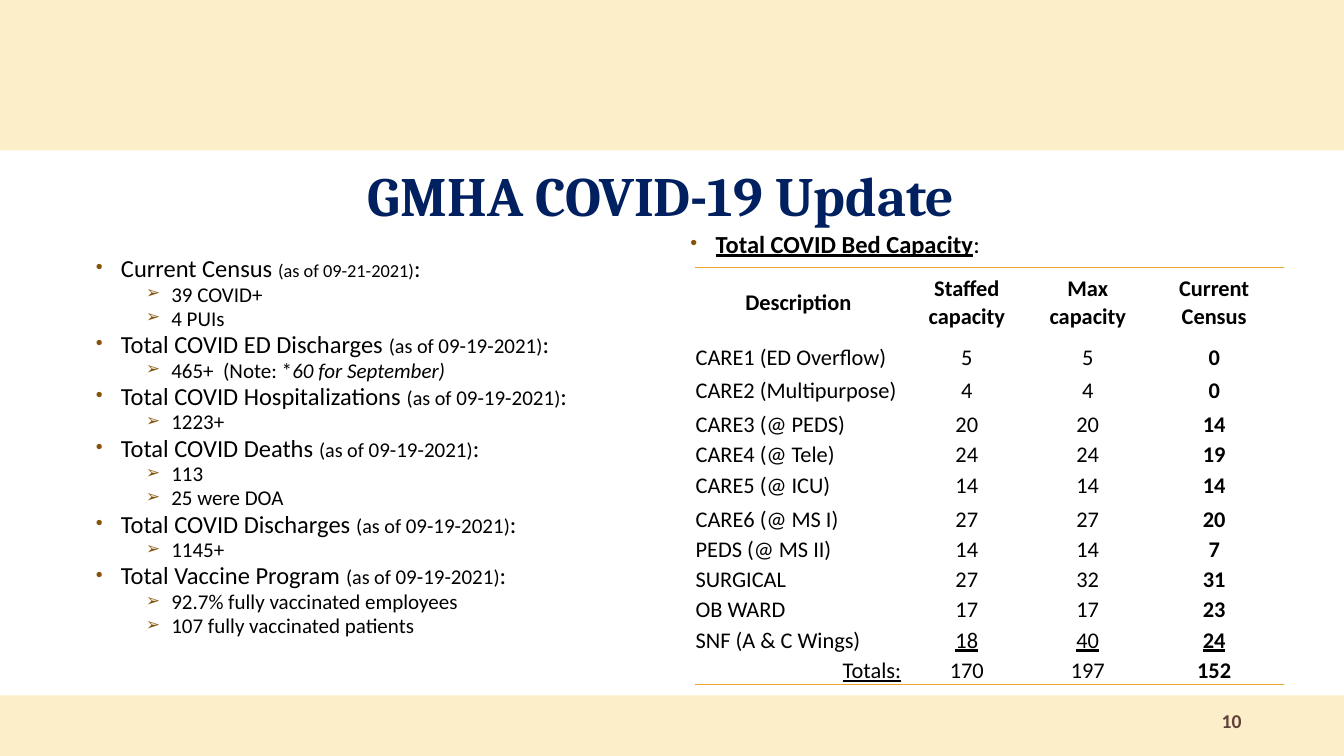
"""Build the GMHA COVID-19 update slide on a grid of 160 columns by 90 rows."""
from dataclasses import dataclass
from typing import Any

from lxml import etree
from pptx import Presentation
from pptx.dml.color import RGBColor
from pptx.enum.shapes import MSO_SHAPE
from pptx.enum.text import MSO_ANCHOR, MSO_AUTO_SIZE, PP_ALIGN
from pptx.oxml.ns import qn
from pptx.util import Emu, Pt

COLS, ROWS, UNIT = 160, 90, 76200
RECT = MSO_SHAPE.RECTANGLE
TOP, MIDDLE, BOTTOM = MSO_ANCHOR.TOP, MSO_ANCHOR.MIDDLE, MSO_ANCHOR.BOTTOM
LEFT, CENTER, RIGHT = PP_ALIGN.LEFT, PP_ALIGN.CENTER, PP_ALIGN.RIGHT
FIXED = MSO_AUTO_SIZE.NONE
PLAIN = "{2D5ABB26-0587-4C30-8999-92F81FD0307C}"
HEX = {"band": "FBEEC9", "title": "002060", "text": "000000",
       "bullet": "85540A", "rule": "F0A22E", "page": "624139"}


@dataclass(frozen=True)
class Area:
    col: float
    row: float
    wide: float
    high: float


@dataclass(frozen=True)
class Piece:
    text: str
    size: float = 15
    bold: bool = False
    slant: bool = False
    under: bool = False
    color: str = "text"
    font: str = "Calibri"


@dataclass(frozen=True)
class Topic:
    head: str
    points: tuple[tuple[Piece, ...], ...]
    date: str = "09-19-2021"
    small: float = 14.4
    mid: float = 15

    def pieces(self) -> tuple[Piece, ...]:
        return (Piece(self.head + " ", 17.5), Piece("(as of ", self.small),
                Piece(self.date, self.mid), Piece(")", self.small), Piece(":", 17.5))


@dataclass(frozen=True)
class Ward:
    name: str
    staffed: str
    most: str
    census: str
    high: float


BANDS = (Area(0, 82.8, COLS, 7.2), Area(0, 0, COLS, 17.9))
TITLE = Area(42.6, 18.7, 80.2, 8.9)
STATS = Area(10.2, 30.5, 68, 49.9)
BEDS = Area(81, 27.6, 68, 49.3)
GRID = Area(82.7, 31.8, 70.2, 49.7)
PAGE = Area(106, 83.4, 43, 4.8)
WIDTHS = (24.7, 15.4, 13.4, 16.7)

TOPICS = (
    Topic("Current Census", ((Piece("39 COVID+"),), (Piece("4 PUIs"),)),
          "09-21-2021", 13.1, 13.1),
    Topic("Total COVID ED Discharges",
          ((Piece("465+  (Note: *"), Piece("60 for September)", slant=True)),)),
    Topic("Total COVID Hospitalizations", ((Piece("1223+"),),)),
    Topic("Total COVID Deaths", ((Piece("113"),), (Piece("25 were DOA"),))),
    Topic("Total COVID Discharges", ((Piece("1145+"),),)),
    Topic("Total Vaccine Program", ((Piece("92.7% fully vaccinated employees"),),
                                    (Piece("107 fully vaccinated patients"),))),
)
WARDS = (
    Ward("Description", "Staffed capacity", "Max capacity", "Current Census", 8.4),
    Ward("CARE1 (ED Overflow)", "5", "5", "0", 4),
    Ward("CARE2 (Multipurpose)", "4", "4", "0", 4),
    Ward("CARE3 (@ PEDS)", "20", "20", "14", 4),
    Ward("CARE4 (@ Tele)", "24", "24", "19", 3.6),
    Ward("CARE5 (@ ICU)", "14", "14", "14", 3.7),
    Ward("CARE6 (@ MS I)", "27", "27", "20", 4),
    Ward("PEDS (@ MS II)", "14", "14", "7", 3.6),
    Ward("SURGICAL", "27", "32", "31", 3.6),
    Ward("OB WARD", "17", "17", "23", 3.6),
    Ward("SNF (A & C Wings)", "18", "40", "24", 3.6),
    Ward("Totals:", "170", "197", "152", 3.6),
)


def span(count: float) -> Emu:
    return Emu(round(count * UNIT))


def box(area: Area) -> tuple[Emu, Emu, Emu, Emu]:
    return span(area.col), span(area.row), span(area.wide), span(area.high)


def place(shape: Any, area: Area, anchor: Any) -> Any:
    shape.left, shape.top, shape.width, shape.height = box(area)
    frame = shape.text_frame
    frame.word_wrap = True
    frame.auto_size = FIXED
    frame.vertical_anchor = anchor
    return frame


def write(para: Any, pieces: tuple[Piece, ...]) -> None:
    for piece in pieces:
        run = para.add_run()
        run.text = piece.text
        font = run.font
        font.name, font.size = piece.font, Pt(piece.size)
        font.bold, font.italic, font.underline = piece.bold, piece.slant, piece.under
        font.color.rgb = RGBColor.from_string(HEX[piece.color])


def add_point(frame: Any, level: int, pieces: tuple[Piece, ...]) -> None:
    first = not frame.paragraphs[0].runs
    para = frame.paragraphs[0] if first else frame.add_paragraph()
    para.level = level
    props = para._p.get_or_add_pPr()
    props.set("marL", str(span(3 + 6 * level)))
    props.set("indent", str(span(-3)))
    tint = etree.SubElement(props, qn("a:buClr"))
    etree.SubElement(tint, qn("a:srgbClr"), val=HEX["bullet"])
    etree.SubElement(props, qn("a:buSzPct"), val="80000")
    etree.SubElement(props, qn("a:buFont"), typeface="Arial")
    etree.SubElement(props, qn("a:buChar"), char="•➢"[level])
    para.alignment = LEFT
    para.line_spacing = 0.7
    para.space_before = Pt(0 if first else 0.3 * pieces[0].size)
    para.space_after = Pt(0)
    write(para, pieces)


def add_rule(cell: Any, side: str) -> None:
    line = etree.Element(qn(side), w=str(Pt(1)))
    fill = etree.SubElement(line, qn("a:solidFill"))
    etree.SubElement(fill, qn("a:srgbClr"), val=HEX["rule"])
    cell._tc.get_or_add_tcPr().insert(0, line)


def add_wards(slide: Any) -> None:
    table = slide.shapes.add_table(len(WARDS), len(WIDTHS), *box(GRID)).table
    table.first_row = table.horz_banding = False
    table._tbl.tblPr.find(qn("a:tableStyleId")).text = PLAIN
    for column, wide in zip(table.columns, WIDTHS):
        column.width = span(wide)
    last = len(WARDS) - 1
    for row, ward in enumerate(WARDS):
        table.rows[row].height = span(ward.high)
        texts = (ward.name, ward.staffed, ward.most, ward.census)
        for col, text in enumerate(texts):
            cell = table.cell(row, col)
            cell.fill.background()
            cell.margin_left = cell.margin_right = cell.margin_top = span(0.12)
            cell.margin_bottom = 0
            cell.vertical_anchor = BOTTOM if row else MIDDLE
            para = cell.text_frame.paragraphs[0]
            para.alignment = CENTER
            if col == 0 and row:
                para.alignment = RIGHT if row == last else LEFT
            under = (row == last) if col == 0 else (row == last - 1)
            write(para, (Piece(text, 16, row == 0 or col == 3, under=under),))
            if row in (0, last):
                add_rule(cell, "a:lnB" if row else "a:lnT")


def add_band(slide: Any, area: Area) -> None:
    band = slide.shapes.add_shape(RECT, *box(area))
    band.shadow.inherit = False
    band.fill.solid()
    band.fill.fore_color.rgb = RGBColor.from_string(HEX["band"])
    band.line.fill.background()
    slide.shapes._spTree.insert(2, band._element)


def main() -> None:
    deck = Presentation()
    deck.slide_width, deck.slide_height = span(COLS), span(ROWS)
    slide = deck.slides.add_slide(deck.slide_layouts[3])
    title, stats, beds = slide.placeholders
    for area in BANDS:
        add_band(slide, area)
    para = place(title, TITLE, MIDDLE).paragraphs[0]
    para.alignment = LEFT
    write(para, (Piece("GMHA COVID-19 Update", 39.6, True,
                       color="title", font="Cambria"),))
    frame = place(stats, STATS, TOP)
    for topic in TOPICS:
        add_point(frame, 0, topic.pieces())
        for point in topic.points:
            add_point(frame, 1, point)
    add_point(place(beds, BEDS, TOP), 0,
              (Piece("Total COVID Bed Capacity", 17.5, True, under=True), Piece(":", 17.5)))
    add_wards(slide)
    para = place(slide.shapes.add_textbox(*box(PAGE)), PAGE, MIDDLE).paragraphs[0]
    para.alignment = RIGHT
    write(para, (Piece("10", 14, True, color="page"),))
    deck.save("out.pptx")


if __name__ == "__main__":
    main()
